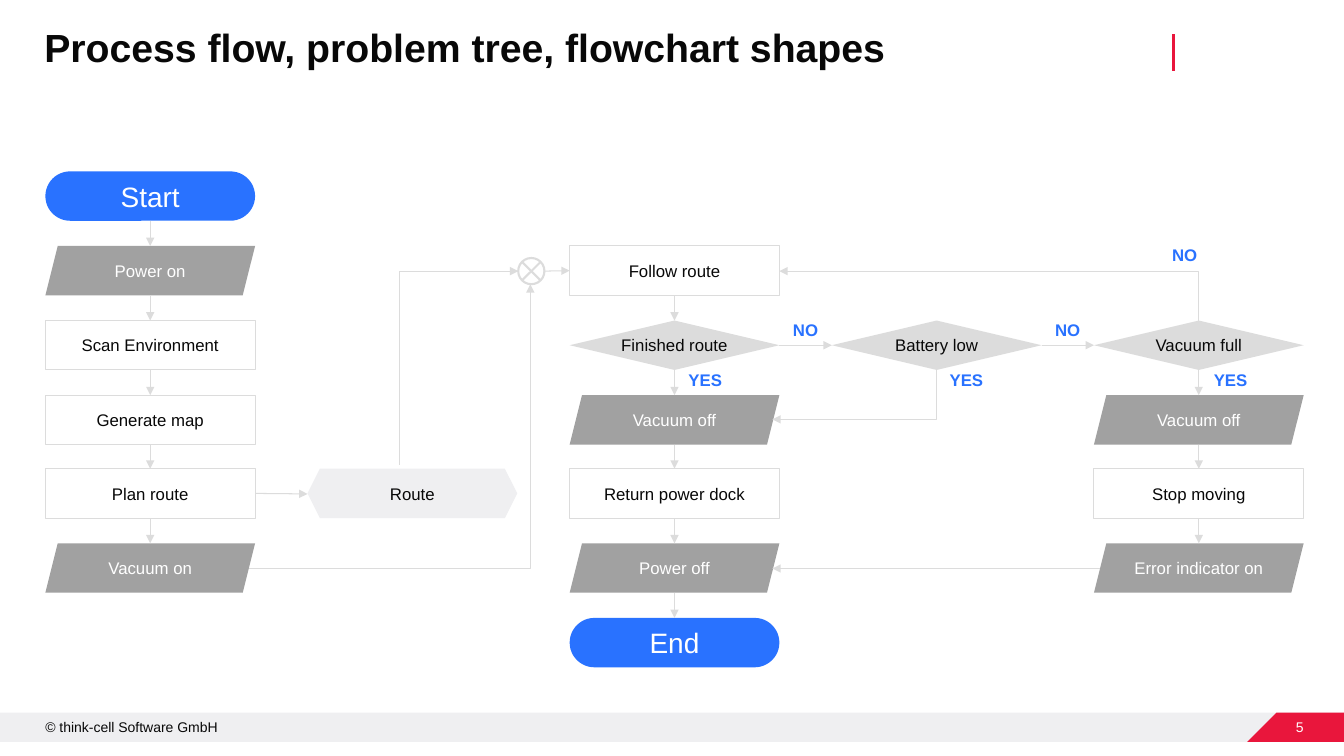
import pptx
import pptx.dml.color
import pptx.enum.shapes
import pptx.enum.text
import pptx.oxml
import pptx.oxml.ns
import pptx.util

SHAPE = pptx.enum.shapes.MSO_SHAPE
CONNECTOR = pptx.enum.shapes.MSO_CONNECTOR
ALIGN = pptx.enum.text.PP_ALIGN
ANCHOR = pptx.enum.text.MSO_ANCHOR

COLORS = {
    "ink": "080808", "white": "FFFFFF", "blue": "2972FF", "red": "E9163C",
    "grey": "A1A1A1", "line": "DCDCDC", "pale": "EFEFF1",
}
KINDS = {
    "terminal": (SHAPE.ROUNDED_RECTANGLE, "blue", None, "white", 20),
    "step": (SHAPE.RECTANGLE, "white", "line", "ink", 12),
    "action": (SHAPE.PARALLELOGRAM, "grey", None, "white", 12),
    "decision": (SHAPE.DIAMOND, "line", None, "ink", 12),
    "preparation": (SHAPE.HEXAGON, "pale", None, "ink", 12),
}
NODES = {
    (0, 0): ("terminal", "Start"),
    (0, 1): ("action", "Power on"),
    (0, 2): ("step", "Scan Environment"),
    (0, 3): ("step", "Generate map"),
    (0, 4): ("step", "Plan route"),
    (0, 5): ("action", "Vacuum on"),
    (1, 4): ("preparation", "Route"),
    (2, 1): ("step", "Follow route"),
    (2, 2): ("decision", "Finished route"),
    (2, 3): ("action", "Vacuum off"),
    (2, 4): ("step", "Return power dock"),
    (2, 5): ("action", "Power off"),
    (2, 6): ("terminal", "End"),
    (3, 2): ("decision", "Battery low"),
    (4, 2): ("decision", "Vacuum full"),
    (4, 3): ("action", "Vacuum off"),
    (4, 4): ("step", "Stop moving"),
    (4, 5): ("action", "Error indicator on"),
}
ACROSS = [((0, 4), (1, 4)), ((2, 2), (3, 2)), ((3, 2), (4, 2))]
ELBOWS = [
    ((247, 564), (526, 282), False),
    ((396, 461), (514, 269), True),
    ((929, 367), (766, 416), True),
    ((1189, 318), (773, 269), True),
]
ANSWERS = [
    ("NO", 785, 317, 28), ("NO", 1045, 317, 28), ("NO", 1161, 242, 28),
    ("YES", 1202, 366, 37), ("YES", 940, 366, 37), ("YES", 681, 366, 37),
]
NODE_W, NODE_H = 208, 49


class FlowSlide:
    """Holds the slide and its style, and draws each kind of element."""

    FONT = "Arial"
    SCALE = 9144

    def __init__(self, deck):
        self.slide = deck.slides.add_slide(deck.slide_layouts[5])
        self.shapes = self.slide.shapes

    def px(self, *lengths):
        return [pptx.util.Emu(int(length * self.SCALE)) for length in lengths]

    def color(self, name):
        return pptx.dml.color.RGBColor.from_string(COLORS[name])

    def set_text(self, shape, text, size, color, align=ALIGN.CENTER,
                 anchor=ANCHOR.MIDDLE, bold=False, tight=True, wrap=False):
        frame = shape.text_frame
        frame.text = text
        frame.word_wrap = wrap
        frame.vertical_anchor = anchor
        if tight:
            frame.margin_left = frame.margin_right = 0
            frame.margin_top = frame.margin_bottom = 0
        paragraph = frame.paragraphs[0]
        paragraph.alignment = align
        paragraph.font.name = self.FONT
        paragraph.font.size = pptx.util.Pt(size)
        paragraph.font.bold = bold
        paragraph.font.color.rgb = self.color(color)
        return paragraph

    def paint(self, shape, fill=None, line=None, weight=0.75):
        shape.shadow.inherit = False
        if fill:
            shape.fill.solid()
            shape.fill.fore_color.rgb = self.color(fill)
        else:
            shape.fill.background()
        if line:
            shape.line.color.rgb = self.color(line)
            shape.line.width = pptx.util.Pt(weight)
        else:
            shape.line.fill.background()

    def title(self, text, *box):
        heading = self.shapes.title
        heading.left, heading.top, heading.width, heading.height = self.px(*box)
        paragraph = self.set_text(heading, text, 28, "ink", ALIGN.LEFT, ANCHOR.TOP,
                                  bold=True, wrap=True)
        paragraph.line_spacing = 0.9

    def label(self, text, box, size, color, **style):
        self.set_text(self.shapes.add_textbox(*self.px(*box)), text, size, color, **style)

    def bar(self, color, *box):
        self.paint(self.shapes.add_shape(SHAPE.RECTANGLE, *self.px(*box)), color)

    def polygon(self, color, points):
        builder = self.shapes.build_freeform(*points[0], scale=self.SCALE)
        builder.add_line_segments(points[1:])
        self.paint(builder.convert_to_shape(), color)

    def node(self, kind, text, col, row):
        preset, fill, line, ink, size = KINDS[kind]
        box = (45 + 260 * col, 170 + round(443 * row / 6), NODE_W, NODE_H)
        shape = self.shapes.add_shape(preset, *self.px(*box))
        if kind == "terminal":
            shape.adjustments[0] = 0.5
        self.paint(shape, fill, line)
        diamond = kind == "decision"
        self.set_text(shape, text, size, ink, tight=diamond, wrap=not diamond)
        return shape

    def line(self, start, end, color="line", weight=0.75, arrow=False,
             kind=CONNECTOR.STRAIGHT, parent=None):
        shapes = parent or self.shapes
        connector = shapes.add_connector(kind, *self.px(*start, *end))
        connector.line.color.rgb = self.color(color)
        connector.line.width = pptx.util.Pt(weight)
        properties = connector._element.spPr
        if arrow:
            tail = pptx.oxml.parse_xml(
                f'<a:tailEnd {pptx.oxml.ns.nsdecls("a")} type="triangle"/>')
            properties.find(pptx.oxml.ns.qn("a:ln")).append(tail)
        properties.append(pptx.oxml.parse_xml(
            f'<a:effectLst {pptx.oxml.ns.nsdecls("a")}/>'))
        return connector

    def link(self, source, source_side, target, target_side, weight=0.75):
        def side_point(shape, side):
            across, down = [(0.5, 0), (0, 0.5), (0.5, 1), (1, 0.5)][side]
            return (round((shape.left + shape.width * across) / self.SCALE),
                    round((shape.top + shape.height * down) / self.SCALE))

        arrow = self.line(side_point(source, source_side),
                          side_point(target, target_side), weight=weight, arrow=True)
        six_sided = (SHAPE.PARALLELOGRAM, SHAPE.HEXAGON)
        if source.auto_shape_type not in six_sided:
            arrow.begin_connect(source, source_side)
        if target.auto_shape_type not in six_sided:
            arrow.end_connect(target, target_side)

    def elbow(self, start, end, vertical_first):
        (x1, y1), (x2, y2) = start, end
        if vertical_first:
            mid_x, mid_y = (x1 + x2) / 2, (y1 + y2) / 2
            half_x, half_y = (x2 - x1) / 2, (y2 - y1) / 2
            start = (mid_x - half_y, mid_y + half_x)
            end = (mid_x + half_y, mid_y - half_x)
        arrow = self.line(start, end, arrow=True, kind=CONNECTOR.ELBOW)
        properties = arrow._element.spPr
        properties.find(pptx.oxml.ns.qn("a:prstGeom")).set("prst", "bentConnector2")
        if vertical_first:
            properties.find(pptx.oxml.ns.qn("a:xfrm")).set("rot", "5400000")

    def junction(self, left, top, size, inset):
        group = self.shapes.add_group_shape().shapes
        ring = group.add_shape(SHAPE.OVAL, *self.px(left, top, size, size))
        self.paint(ring, line="line", weight=1.5)
        near_x, far_x = left + inset, left + size - inset
        near_y, far_y = top + inset, top + size - inset
        for start, end in (((near_x, near_y), (far_x, far_y)),
                           ((far_x, near_y), (near_x, far_y))):
            self.line(start, end, weight=1.5, parent=group)


def main():
    deck = pptx.Presentation()
    deck.slide_width = pptx.util.Inches(13.33)
    deck.slide_height = pptx.util.Inches(7.5)
    flow = FlowSlide(deck)

    flow.bar("pale", 0, 707, 1333, 29)
    flow.label("© think-cell Software GmbH", (45, 713, 246, 17), 10, "ink",
               align=ALIGN.LEFT, anchor=ANCHOR.TOP, wrap=True)
    flow.line((1164, 34), (1164, 70), "red", 2.25)
    flow.polygon("red", [(1266, 707), (1333, 707), (1333, 736), (1237, 736)])
    flow.label("5", (1276, 713, 17, 17), 10, "white", align=ALIGN.RIGHT)
    flow.title("Process flow, problem tree, flowchart shapes", 44, 28, 1103, 42)

    nodes = {place: flow.node(*content, *place) for place, content in NODES.items()}
    for (col, row), upper in nodes.items():
        lower = nodes.get((col, row + 1))
        if lower:
            flow.link(upper, 2, lower, 0, weight=0.5 if (col, row) == (2, 1) else 0.75)
    for source, target in ACROSS:
        flow.link(nodes[source], 3, nodes[target], 1)
    for bend in ELBOWS:
        flow.elbow(*bend)
    flow.line((1091, 564), (766, 564), arrow=True)
    for text, *box in ANSWERS:
        flow.label(text, (*box, 21), 12, "blue", bold=True)

    into_route = flow.line((539, 269), (565, 269), arrow=True)
    into_route.end_connect(nodes[2, 1], 1)
    flow.junction(514, 256, 26, 4)
    deck.save("out.pptx")


if __name__ == "__main__":
    main()
